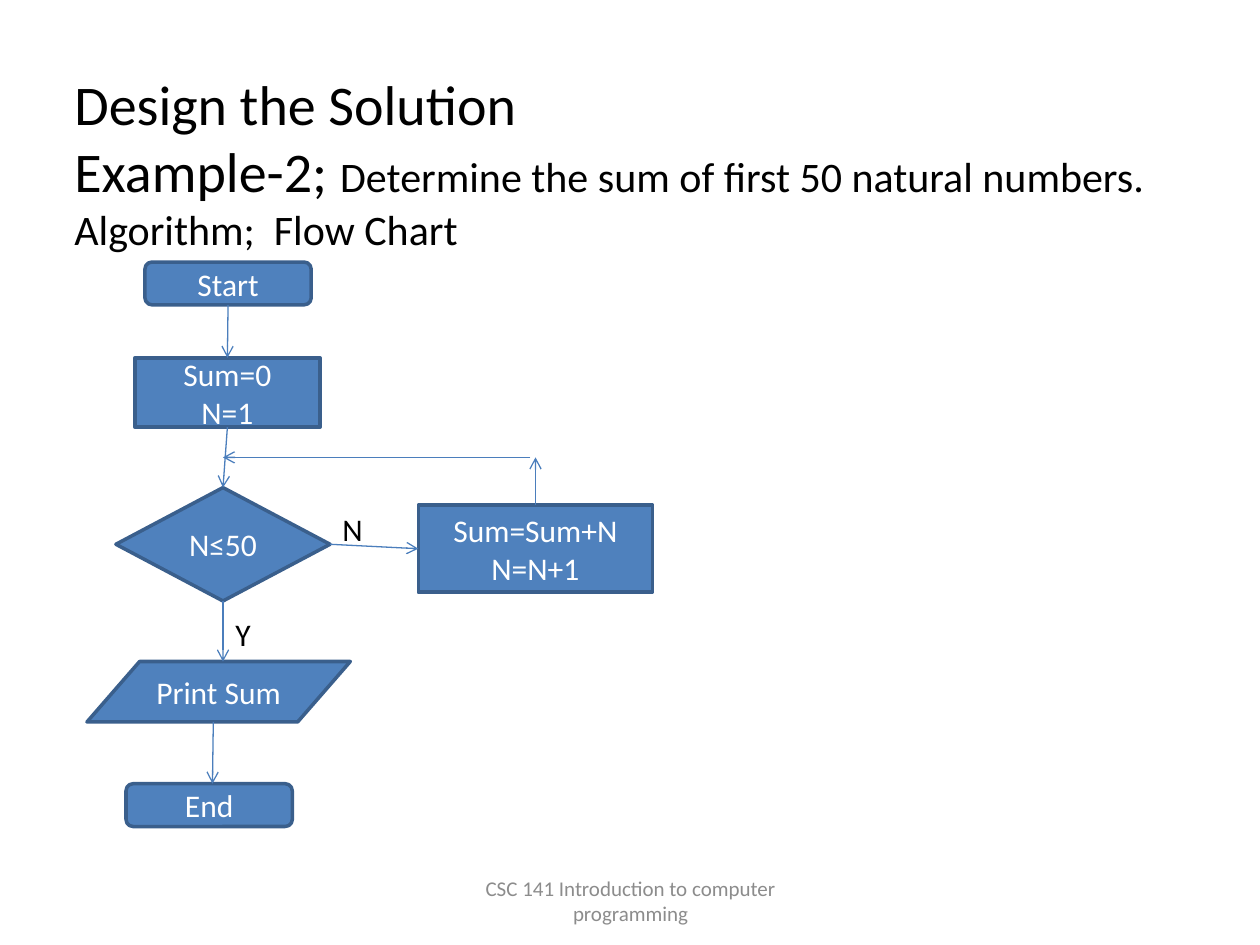
from lxml.etree import SubElement
from pptx import Presentation
from pptx.dml.color import RGBColor
from pptx.enum.shapes import MSO_CONNECTOR, MSO_SHAPE as Shape
from pptx.enum.text import MSO_ANCHOR as Anchor, MSO_AUTO_SIZE, PP_ALIGN as Align
from pptx.oxml.ns import qn
from pptx.util import Inches, Pt

FONT = "Calibri"
FILL, EDGE, ARROW = "4F81BD", "3A5F8C", "4B7EBC"
WHITE, BLACK, GREY = "FFFFFF", "000000", "8C8C8C"

# Title lines, each a list of (text, size)
TITLE = [
    [("Design the Solution", 32)],
    [("Example-2; ", 32), ("Determine the sum of first 50 natural numbers.", 24)],
    [("Algorithm;  Flow Chart", 24)],
]
FOOTER = "CSC 141 Introduction to computer programming"

# Flow chart steps: shape, lines of text, (left, top, width, height)
STEPS = {
    "start": (Shape.ROUNDED_RECTANGLE, ["Start"], (1.15, 2.08, 1.32, 0.34)),
    "init": (Shape.RECTANGLE, ["Sum=0", "N=1"], (1.07, 2.84, 1.47, 0.55)),
    "test": (Shape.FLOWCHART_DECISION, ["N≤50"], (0.92, 3.87, 1.7, 0.9)),
    "add": (Shape.RECTANGLE, ["Sum=Sum+N", "N=N+1"], (3.32, 4.01, 1.86, 0.69)),
    "print": (Shape.FLOWCHART_DATA, ["Print Sum"], (0.69, 5.25, 2.09, 0.48)),
    "end": (Shape.ROUNDED_RECTANGLE, ["End"], (1, 6.22, 1.32, 0.34)),
}
BRANCHES = [("Y", (1.77, 4.83, 0.77, 0.36)), ("N", (2.62, 4, 0.77, 0.36))]
LOOP_Y = 3.63


def color(hex_string):
    return RGBColor.from_string(hex_string)


def write(s, lines, size, hex_string, align=Align.LEFT, anchor=Anchor.TOP):
    tf = s.text_frame
    tf.word_wrap = True
    tf.vertical_anchor = anchor
    tf.text = "\n".join(lines)
    for p in tf.paragraphs:
        p.alignment = align
        p.font.name, p.font.size = FONT, Pt(size)
        p.font.color.rgb = color(hex_string)


def add_text(slide, box, *text):
    write(slide.shapes.add_textbox(*map(Inches, box)), *text)


def add_step(slide, kind, lines, box):
    s = slide.shapes.add_shape(kind, *map(Inches, box))
    s.shadow.inherit = False
    s.fill.solid()
    s.fill.fore_color.rgb = color(FILL)
    s.line.color.rgb = color(EDGE)
    s.line.width = Pt(2)
    write(s, lines, 18, WHITE, Align.CENTER, Anchor.MIDDLE)


def add_arrow(slide, start, end):
    s = slide.shapes.add_connector(MSO_CONNECTOR.STRAIGHT, *map(Inches, start + end))
    s.line.color.rgb = color(ARROW)
    s.line.width = Pt(0.75)
    SubElement(s.line._get_or_add_ln(), qn("a:tailEnd"), type="arrow")
    SubElement(s._element.spPr, qn("a:effectLst"))


def side(step, x_share, y_share):
    """Point of a step's box, as shares of its width and height."""
    left, top, width, height = STEPS[step][2]
    return left + x_share * width, top + y_share * height


def add_title(slide):
    s = slide.shapes.title
    s.left, s.top, s.width, s.height = map(Inches, (0.49, 0.5, 8.97, 1.58))
    tf = s.text_frame
    tf.word_wrap = True
    tf.auto_size = MSO_AUTO_SIZE.NONE
    tf.vertical_anchor = Anchor.TOP
    p = tf.paragraphs[0]
    p.alignment = Align.LEFT
    p.font.name = FONT
    p.font.color.rgb = color(BLACK)
    for i, line in enumerate(TITLE):
        if i:
            p.add_line_break()
        for text, size in line:
            r = p.add_run()
            r.text = text
            r.font.size = Pt(size)


def main():
    prs = Presentation()
    prs.slide_width, prs.slide_height = Inches(10), Inches(7.5)
    slide = prs.slides.add_slide(prs.slide_layouts[5])
    add_title(slide)

    for step in STEPS.values():
        add_step(slide, *step)

    test_x = side("test", 0.5, 0)[0]
    add_x = side("add", 0.5, 0)[0]
    arrows = [
        (side("start", 0.5, 1), side("init", 0.5, 0)),
        (side("init", 0.5, 1), side("test", 0.5, 0)),
        (side("test", 0.5, 1), (test_x, side("print", 0, 0)[1])),
        (side("test", 1, 0.5), side("add", 0, 0.5)),
        (side("print", 0.48, 1), side("end", 0.52, 0)),
        (side("add", 0.5, 0), (add_x, LOOP_Y)),
        ((add_x - 0.04, LOOP_Y), (test_x, LOOP_Y)),
    ]
    for start, end in arrows:
        add_arrow(slide, start, end)

    for label, box in BRANCHES:
        add_text(slide, box, [label], 18, BLACK)
    add_text(slide, (3.42, 6.95, 3.17, 0.4), [FOOTER], 12, GREY,
             Align.CENTER, Anchor.MIDDLE)
    prs.save("out.pptx")


if __name__ == "__main__":
    main()
